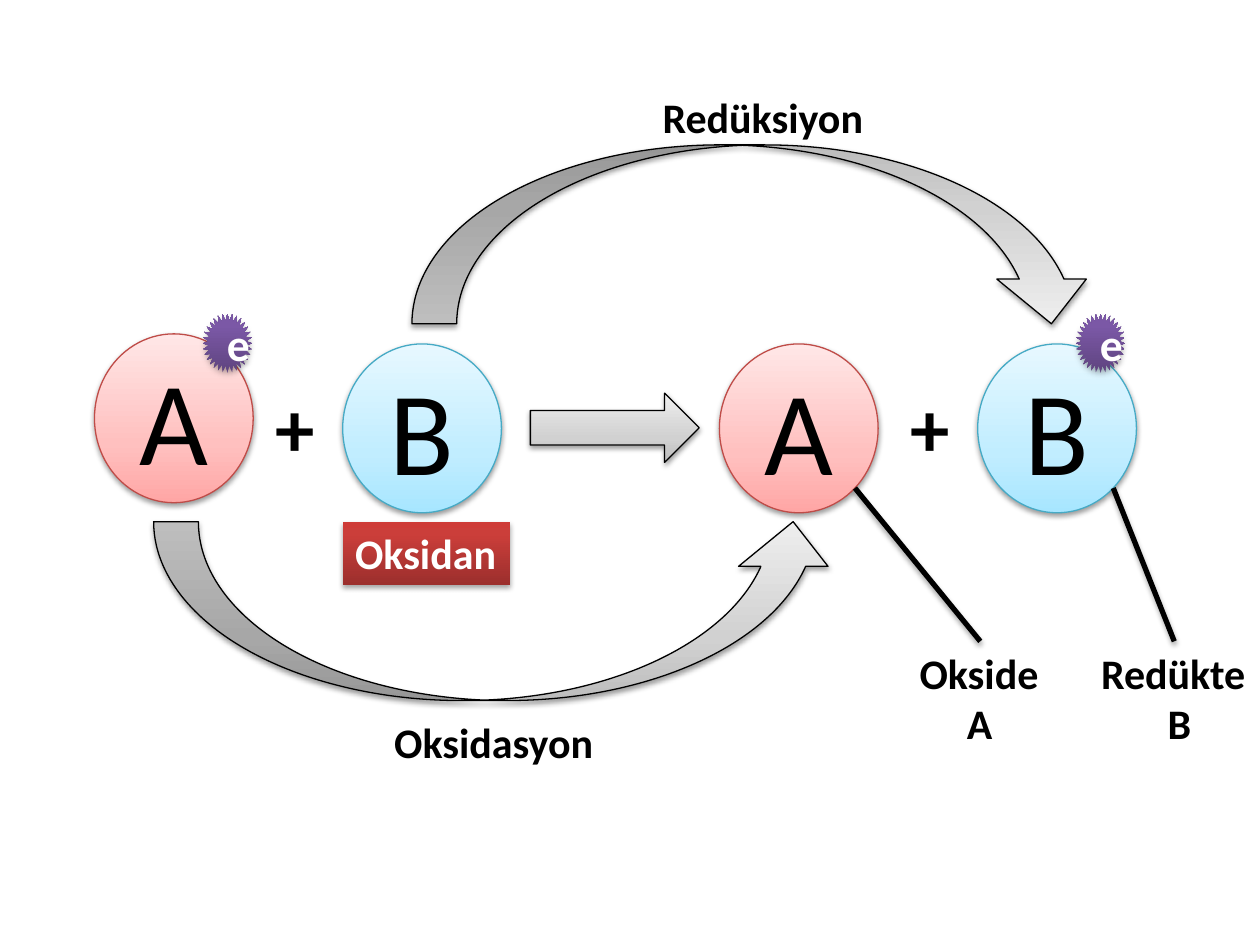
from copy import deepcopy
from math import cos, pi

from lxml import etree
from pptx import Presentation
from pptx import util as u
from pptx.dml.color import RGBColor
from pptx.enum import shapes, text
from pptx.oxml.ns import qn

COLORS = {"black": "000000", "white": "FFFFFF", "red line": "BF4C48", "blue line": "46AAC5"}
GRADIENTS = {
    "red": {0: "FFA6A5", 0.35: "FFC0BF", 1: "FFE7E7"},
    "blue": {0: "A7E6FF", 0.35: "C1EDFF", 1: "E7F8FF"},
    "gray": {0: "BDBDBD", 0.35: "D1D1D1", 1: "EEEEEE"},
    "purple": {0: "5F4480", 0.8: "7B58A6", 1: "7C57A8"},
    "dark red": {0: "9C2F2D", 0.8: "CB3E3A", 1: "CE3B37"},
}
SOFT_SHADOW = {"distance": 1.6, "opacity": 38}
STRONG_SHADOW = {"distance": 1.8, "opacity": 35}
CELL = u.Inches(0.1)
KIND = shapes.MSO_SHAPE
CIRCLE_ROW = 27.3
LABEL_FORMAT = {"size": u.Pt(24), "bold": True}


def color(name):
    return RGBColor.from_string(COLORS[name])


def grid(*cells):
    return [round(cell * CELL) for cell in cells]


def add_shadow(shape, distance, opacity):
    properties = shape._element.spPr
    for old in properties.findall(qn("a:effectLst")):
        properties.remove(old)
    effects = etree.SubElement(properties, qn("a:effectLst"))
    shadow = etree.SubElement(effects, qn("a:outerShdw"), blurRad=str(u.Pt(3.1)),
                              dist=str(u.Pt(distance)), dir="5400000", rotWithShape="0")
    shade = etree.SubElement(shadow, qn("a:srgbClr"), val=COLORS["black"])
    etree.SubElement(shade, qn("a:alpha"), val=str(opacity * 1000))


def fill_gradient(shape, name):
    shape.fill.gradient()
    shape.fill.gradient_angle = 90
    stop_list = shape._element.spPr.find(qn("a:gradFill")).find(qn("a:gsLst"))
    stop_list.append(deepcopy(stop_list[0]))
    for stop, (position, value) in zip(shape.fill.gradient_stops, GRADIENTS[name].items()):
        stop.position = position
        stop.color.rgb = RGBColor.from_string(value)


def add_solid(slide, kind, cells, gradient, line=None, shadow=SOFT_SHADOW):
    shape = slide.shapes.add_shape(kind, *grid(*cells))
    fill_gradient(shape, gradient)
    if line:
        shape.line.color.rgb = color(line)
        shape.line.width = u.Pt(0.75)
    else:
        shape.line.fill.background()
    add_shadow(shape, **shadow)
    return shape


def write(paragraph, words, ink, font_format):
    run = paragraph.add_run()
    run.text = words
    run.font.color.rgb = color(ink)
    for key, value in {"name": "Calibri", **font_format}.items():
        setattr(run.font, key, value)


def add_circle(slide, letter, column, row, hue):
    circle = add_solid(slide, KIND.OVAL, (column, row, 12.6, 13.4), hue, f"{hue} line")
    write(circle.text_frame.paragraphs[0], letter, "black", {"size": u.Pt(68)})
    return circle


def add_electron(slide, column):
    star = add_solid(slide, KIND.STAR_32_POINT, (column, 24.9, 3.9, 4.7), "purple",
                     shadow=STRONG_SHADOW)
    write(star.text_frame.paragraphs[0], "e", "white", {"size": u.Pt(26), "bold": True})


def fit_text(shape, lines, ink="black", indent=0, size=24):
    frame = shape.text_frame
    frame_format = {"word_wrap": False, "auto_size": text.MSO_AUTO_SIZE.SHAPE_TO_FIT_TEXT,
                    "vertical_anchor": text.MSO_ANCHOR.TOP}
    for key, value in frame_format.items():
        setattr(frame, key, value)
    for index, words in enumerate(lines):
        paragraph = frame.add_paragraph() if index else frame.paragraphs[0]
        paragraph.alignment = text.PP_ALIGN.LEFT
        if index:
            paragraph._p.get_or_add_pPr().set("marL", str(u.Pt(indent)))
        write(paragraph, words, ink, {**LABEL_FORMAT, "size": u.Pt(size)})


def add_label(slide, cells, *lines, **options):
    label = slide.shapes.add_textbox(*grid(*cells))
    fit_text(label, lines, **options)
    return label


def add_pointer(slide, circle, label):
    reach = (1 + cos(pi / 4)) / 2
    start = (round(circle.left + circle.width * reach), round(circle.top + circle.height * reach))
    pointer = slide.shapes.add_connector(shapes.MSO_CONNECTOR.STRAIGHT, *start, *start)
    pointer.end_connect(label, 0)
    pointer.line.color.rgb = color("black")
    pointer.line.width = u.Pt(3)
    add_shadow(pointer, **STRONG_SHADOW)


def add_curved_arrow(slide, column, row, flipped=False):
    arrow = add_solid(slide, KIND.CURVED_UP_ARROW, (column, row, 54.3, 14.2), "gray", "black")
    if flipped:
        arrow._element.spPr.find(qn("a:xfrm")).set("flipV", "1")


def main():
    presentation = Presentation()
    presentation.slide_width, presentation.slide_height = grid(100, 75)
    slide = presentation.slides.add_slide(presentation.slide_layouts[6])

    add_circle(slide, "A", 7.5, 26.5, "red")
    add_circle(slide, "B", 27.2, CIRCLE_ROW, "blue")
    oxidized = add_circle(slide, "A", 57.1, CIRCLE_ROW, "red")
    reduced = add_circle(slide, "B", 77.6, CIRCLE_ROW, "blue")
    for column in (16.1, 85.4):
        add_electron(slide, column)

    add_curved_arrow(slide, 12.2, 41.4)
    add_curved_arrow(slide, 32.7, 11.5, flipped=True)
    add_label(slide, (51.6, 6.8, 18.1, 5), "Redüksiyon")
    add_label(slide, (30.3, 56.4, 18, 5), "Oksidasyon")

    oxidized_label = add_label(slide, (72, 50.9, 11.6, 9.1), "Okside", "A", indent=27)
    reduced_label = add_label(slide, (86.4, 50.9, 13.6, 9.1), "Redükte", "B", indent=38)
    add_pointer(slide, oxidized, oxidized_label)
    add_pointer(slide, reduced, reduced_label)

    oxidant = add_solid(slide, KIND.RECTANGLE, (27.2, 41.4, 13.3, 5), "dark red",
                        shadow=STRONG_SHADOW)
    fit_text(oxidant, ["Oksidan"], ink="white")
    for column in (20.9, 71.3):
        add_label(slide, (column, 29.6, 5.2, 8.6), "+", size=45)
    add_solid(slide, KIND.RIGHT_ARROW, (42.1, 31.2, 13.4, 5.5), "gray", "black")

    presentation.save("out.pptx")


if __name__ == "__main__":
    main()
